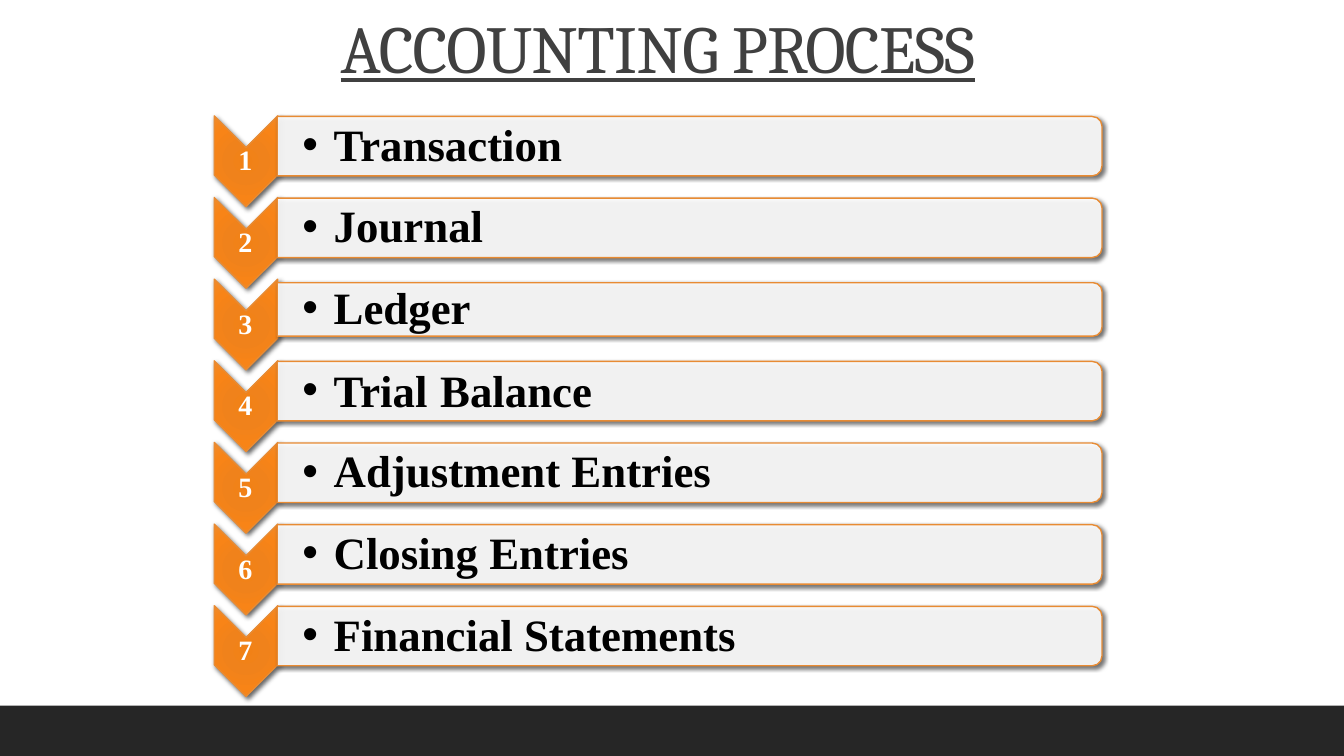
from lxml import etree
from pptx import Presentation
from pptx.dml.color import RGBColor
from pptx.enum.shapes import MSO_SHAPE
from pptx.enum.text import MSO_ANCHOR, PP_ALIGN
from pptx.oxml.ns import qn
from pptx.util import Inches, Pt

CHEVRON = MSO_SHAPE.CHEVRON
ROUNDED_TOP = MSO_SHAPE.ROUND_2_SAME_RECTANGLE
RECTANGLE = MSO_SHAPE.RECTANGLE
MIDDLE, BOTTOM = MSO_ANCHOR.MIDDLE, MSO_ANCHOR.BOTTOM
CENTER, LEFT = PP_ALIGN.CENTER, PP_ALIGN.LEFT

WHITE = RGBColor(0xFF, 0xFF, 0xFF)
BLACK = RGBColor(0x00, 0x00, 0x00)
TITLE_GREY = RGBColor(0x40, 0x40, 0x40)
FOOTER_GREY = RGBColor(0x26, 0x26, 0x26)
ORANGE_LINE = RGBColor(0xE8, 0x8B, 0x33)
ORANGE_STOPS = [
    (0, RGBColor(0xF1, 0x81, 0x16)),
    (34, RGBColor(0xF0, 0x82, 0x1B)),
    (70, RGBColor(0xF8, 0x84, 0x17)),
    (100, RGBColor(0xF1, 0x8B, 0x2A)),
]

TITLE_FONT, BODY_FONT = "Cambria", "Times New Roman"
STEPS = [
    ["Transaction"],
    ["Journal"],
    ["Ledger"],
    ["Trial", " ", "Balance"],
    ["Adjustment Entries"],
    ["Closing Entries"],
    ["Financial Statements"],
]
PITCH = 0.81
FIRST_BAR_MIDDLE, FIRST_CHEVRON_MIDDLE = 1.45, 1.6
BAR_HEIGHT, LEDGER_BAR_HEIGHT = 0.59, 0.53


def add_xml(parent, tag, **attributes):
    return etree.SubElement(parent, qn(tag), {key: str(value) for key, value in attributes.items()})


def add_shadow(shape, blur):
    shape.shadow.inherit = False
    effects = shape._element.spPr.find(qn("a:effectLst"))
    shadow = add_xml(effects, "a:outerShdw", blurRad=Pt(blur), dist=Pt(2),
                     dir=45 * 60000, algn="tl", rotWithShape=0)
    color = add_xml(shadow, "a:srgbClr", val=BLACK)
    add_xml(color, "a:alpha", val=60000)


def fill_radial(shape, stops):
    """Fill the shape with a gradient that spreads from its lower right corner."""
    properties = shape._element.spPr
    gradient = etree.Element(qn("a:gradFill"), rotWithShape="1")
    stop_list = add_xml(gradient, "a:gsLst")
    for percent, color in stops:
        stop = add_xml(stop_list, "a:gs", pos=percent * 1000)
        add_xml(stop, "a:srgbClr", val=color)
    circle = add_xml(gradient, "a:path", path="circle")
    add_xml(circle, "a:fillToRect", l=100000, t=100000, r=100000, b=100000)
    properties.find(qn("a:prstGeom")).addnext(gradient)


def add_turned_shape(page, kind, center_x, center_y, width, height, blur):
    """Add an outlined shape turned by 90 degrees; width and height are before the turn."""
    shape = page.shapes.add_shape(kind, Inches(center_x - width / 2), Inches(center_y - height / 2),
                                  Inches(width), Inches(height))
    shape.rotation = 90
    shape.line.color.rgb = ORANGE_LINE
    shape.line.width = Pt(1)
    add_shadow(shape, blur)
    return shape


def add_text_box(page, left, top, width, height, anchor, align, insets):
    """Add an empty text box and return its first paragraph."""
    box = page.shapes.add_textbox(Inches(left), Inches(top), Inches(width), Inches(height))
    frame = box.text_frame
    frame.word_wrap = True
    frame.vertical_anchor = anchor
    frame.margin_left, frame.margin_top, frame.margin_right, frame.margin_bottom = map(Inches, insets)
    para = frame.paragraphs[0]
    para.alignment = align
    para.line_spacing = 0.9
    return para


def add_span(para, text, font, size, color, bold=False):
    span = para.add_run()
    span.text = text
    span.font.name = font
    span.font.size = Pt(size)
    span.font.color.rgb = color
    span.font.bold = bold
    return span


def add_bullet(para):
    properties = para._p.get_or_add_pPr()
    properties.set("marL", str(Inches(0.31)))
    properties.set("indent", str(Inches(-0.31)))
    add_xml(properties, "a:buFont", typeface="Arial")
    add_xml(properties, "a:buChar", char="•")


def add_title(page):
    para = add_text_box(page, -0.14, 0, 13.33, 0.92, BOTTOM, CENTER, (0.1, 0.05, 0.1, 0.05))
    span = add_span(para, "ACCOUNTING PROCESS", TITLE_FONT, 48, TITLE_GREY)
    span.font.underline = True
    span._r.get_or_add_rPr().set("spc", "-50")


def add_footer_band(page):
    band = page.shapes.add_shape(RECTANGLE, 0, Inches(7), Inches(13.33), Inches(0.5))
    band.shadow.inherit = False
    band.fill.solid()
    band.fill.fore_color.rgb = FOOTER_GREY
    band.line.fill.background()


def add_number_chevron(page, number, middle):
    chevron = add_turned_shape(page, CHEVRON, 2.44, middle, 0.9, 0.63, 3.5)
    fill_radial(chevron, ORANGE_STOPS)
    para = add_text_box(page, 2.12, middle - 0.13, 0.63, 0.27, MIDDLE, CENTER, (0.01,) * 4)
    add_span(para, str(number), BODY_FONT, 20, WHITE, bold=True)


def add_step_bar(page, words, middle, height):
    bar = add_turned_shape(page, ROUNDED_TOP, 6.84, middle, height, 8.18, 3)
    bar.fill.solid()
    bar.fill.fore_color.rgb = WHITE
    color = bar._element.spPr.find(qn("a:solidFill")).find(qn("a:srgbClr"))
    add_xml(color, "a:alpha", val=90000)
    para = add_text_box(page, 2.75, middle - 0.26, 8.15, 0.53, MIDDLE, LEFT, (0.25, 0.02, 0.02, 0.02))
    add_bullet(para)
    for word in words:
        is_gap = word == " "
        add_span(para, word, BODY_FONT, 36 if is_gap else 32, BLACK, bold=not is_gap)


def main():
    deck = Presentation()
    deck.slide_width, deck.slide_height = Inches(13.33), Inches(7.5)
    page = deck.slides.add_slide(deck.slide_layouts[6])
    add_footer_band(page)
    add_title(page)
    for index, words in enumerate(STEPS):
        offset = index * PITCH
        height = LEDGER_BAR_HEIGHT if words == ["Ledger"] else BAR_HEIGHT
        add_number_chevron(page, index + 1, FIRST_CHEVRON_MIDDLE + offset)
        add_step_bar(page, words, FIRST_BAR_MIDDLE + offset, height)
    deck.save("out.pptx")


if __name__ == "__main__":
    main()
